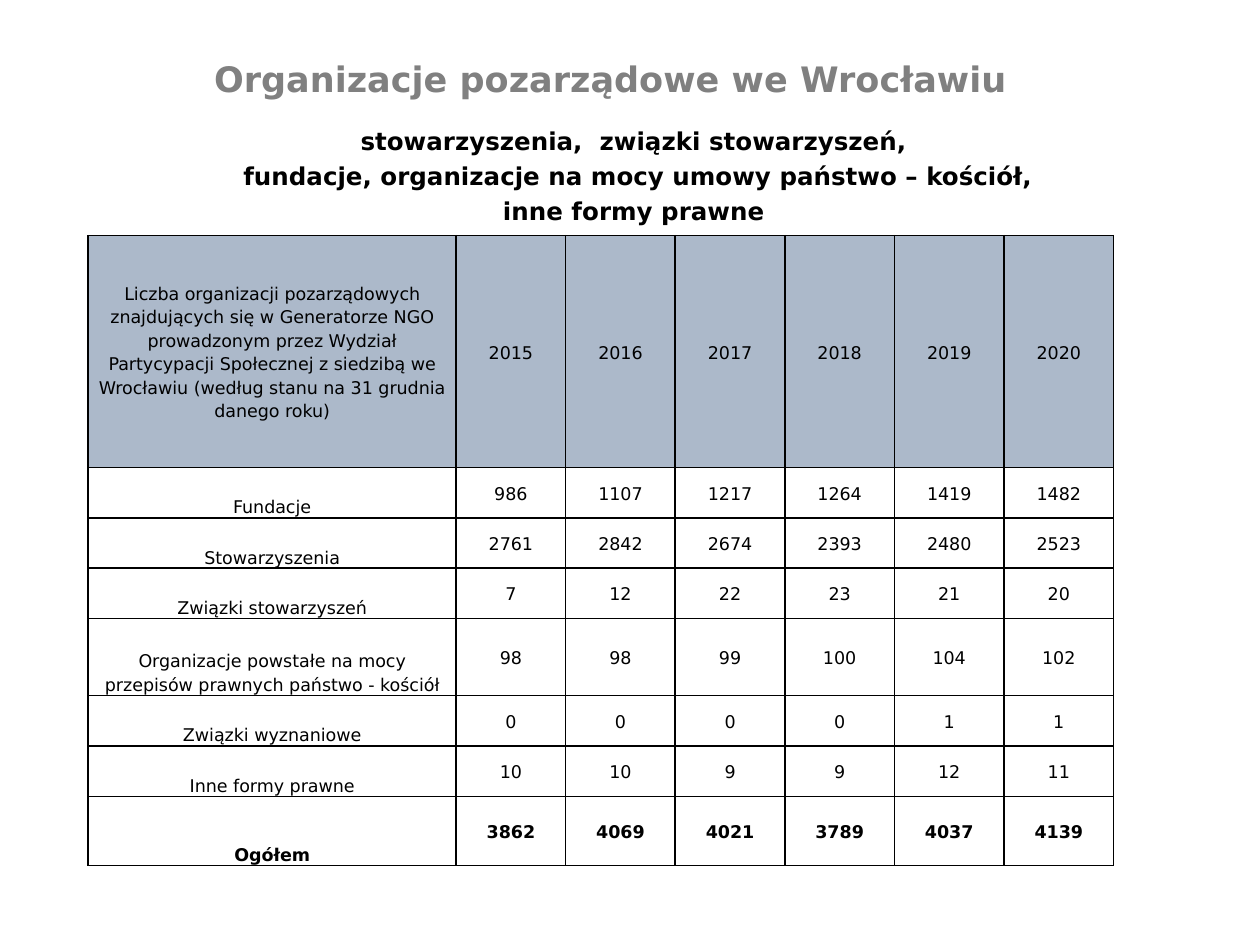
from lxml.etree import SubElement
from pptx import Presentation
from pptx.dml.color import RGBColor
from pptx.enum.text import MSO_ANCHOR as Anchor, MSO_AUTO_SIZE as AutoSize, PP_ALIGN as Align
from pptx.oxml import parse_xml
from pptx.oxml.ns import nsdecls, qn
from pptx.util import Inches, Pt

# Content
TITLE = "Organizacje pozarządowe we Wrocławiu"
LEGAL_FORMS = [
    "stowarzyszenia,  związki stowarzyszeń,",
    " fundacje, organizacje na mocy umowy państwo – kościół,",
    "inne formy prawne",
]
HEADER = [
    "Liczba organizacji pozarządowych znajdujących się w Generatorze NGO "
    "prowadzonym przez Wydział Partycypacji Społecznej z siedzibą we Wrocławiu "
    "(według stanu na 31 grudnia danego roku)",
    2015, 2016, 2017, 2018, 2019, 2020,
]
COUNTS = [
    ["Fundacje", 986, 1107, 1217, 1264, 1419, 1482],
    ["Stowarzyszenia", 2761, 2842, 2674, 2393, 2480, 2523],
    ["Związki stowarzyszeń", 7, 12, 22, 23, 21, 20],
    ["Organizacje powstałe na mocy przepisów prawnych państwo - kościół",
     98, 98, 99, 100, 104, 102],
    ["Związki wyznaniowe", 0, 0, 0, 0, 1, 1],
    ["Inne formy prawne", 10, 10, 9, 9, 12, 11],
]
TOTAL = ["Ogółem", 3862, 4069, 4021, 3789, 4037, 4139]

# Look and grid, in inches
COLORS = {"title": "808080", "text": "000000", "header": "ACB9CA", "border": "000000"}
FONT = "DejaVu Sans"
LEFT, TABLE_TOP = 0.7, 1.87
COLUMNS = [2.92] + [0.87] * (len(HEADER) - 1)
ROWS = [1.84, 0.4, 0.4, 0.4, 0.61, 0.4, 0.4, 0.55]


def style(paragraph, size, color, bold):
    paragraph.alignment = Align.CENTER
    font = paragraph.font
    font.name, font.size, font.bold = FONT, Pt(size), bold
    font.color.rgb = RGBColor.from_string(COLORS[color])


def place(shape, left, top, width, height):
    shape.left, shape.top = Inches(left), Inches(top)
    shape.width, shape.height = Inches(width), Inches(height)


def add_borders(cell):
    properties = cell._tc.get_or_add_tcPr()
    for index, side in enumerate(("lnL", "lnR", "lnT", "lnB")):
        properties.insert(index, parse_xml(
            f'<a:{side} {nsdecls("a")} w="{Pt(1)}"><a:solidFill>'
            f'<a:srgbClr val="{COLORS["border"]}"/></a:solidFill></a:{side}>'))


def fill_cell(cell, value, is_header, is_label, is_total):
    cell.text = str(value)
    cell.margin_left = cell.margin_right = Inches(0.05)
    cell.margin_top = cell.margin_bottom = 0
    cell.vertical_anchor = Anchor.BOTTOM if is_label and not is_header else Anchor.MIDDLE
    paragraph = cell.text_frame.paragraphs[0]
    paragraph.line_spacing = 1.15
    style(paragraph, 10, "text", is_total)
    if is_header:
        cell.fill.solid()
        cell.fill.fore_color.rgb = RGBColor.from_string(COLORS["header"])
    else:
        cell.fill.background()
    add_borders(cell)


def main():
    deck = Presentation()
    deck.slide_width, deck.slide_height = Inches(10), Inches(7.5)
    slide = deck.slides.add_slide(deck.slide_layouts[1])

    # Title
    title = slide.shapes.title
    place(title, 1.09, 0.31, 7.51, 0.62)
    title.text_frame.text = TITLE
    title.text_frame.auto_size = AutoSize.NONE
    title.text_frame.vertical_anchor = Anchor.MIDDLE
    style(title.text_frame.paragraphs[0], 20, "title", True)

    # Legal forms under the title
    forms = slide.placeholders[1]
    place(forms, LEFT, 0.95, 8.66, 0.9)
    frame = forms.text_frame
    frame.text = "\n".join(LEGAL_FORMS)
    frame.auto_size = AutoSize.NONE
    for index, paragraph in enumerate(frame.paragraphs):
        properties = paragraph._p.get_or_add_pPr()
        properties.set("marL", "0")
        properties.set("indent", "0")
        SubElement(properties, qn("a:buNone"))
        paragraph.space_before = Pt(3.3 if index else 0)
        style(paragraph, 14, "text", True)

    # Table of counts by year
    records = [HEADER, *COUNTS, TOTAL]
    table = slide.shapes.add_table(
        len(ROWS), len(COLUMNS), Inches(LEFT), Inches(TABLE_TOP),
        Inches(sum(COLUMNS)), Inches(sum(ROWS))).table
    table.horz_banding = False
    for column, width in zip(table.columns, COLUMNS):
        column.width = Inches(width)
    for row, height, record in zip(table.rows, ROWS, records):
        row.height = Inches(height)
        for index, (cell, value) in enumerate(zip(row.cells, record)):
            fill_cell(cell, value, record is HEADER, index == 0, record is TOTAL)

    deck.save("out.pptx")


if __name__ == "__main__":
    main()
